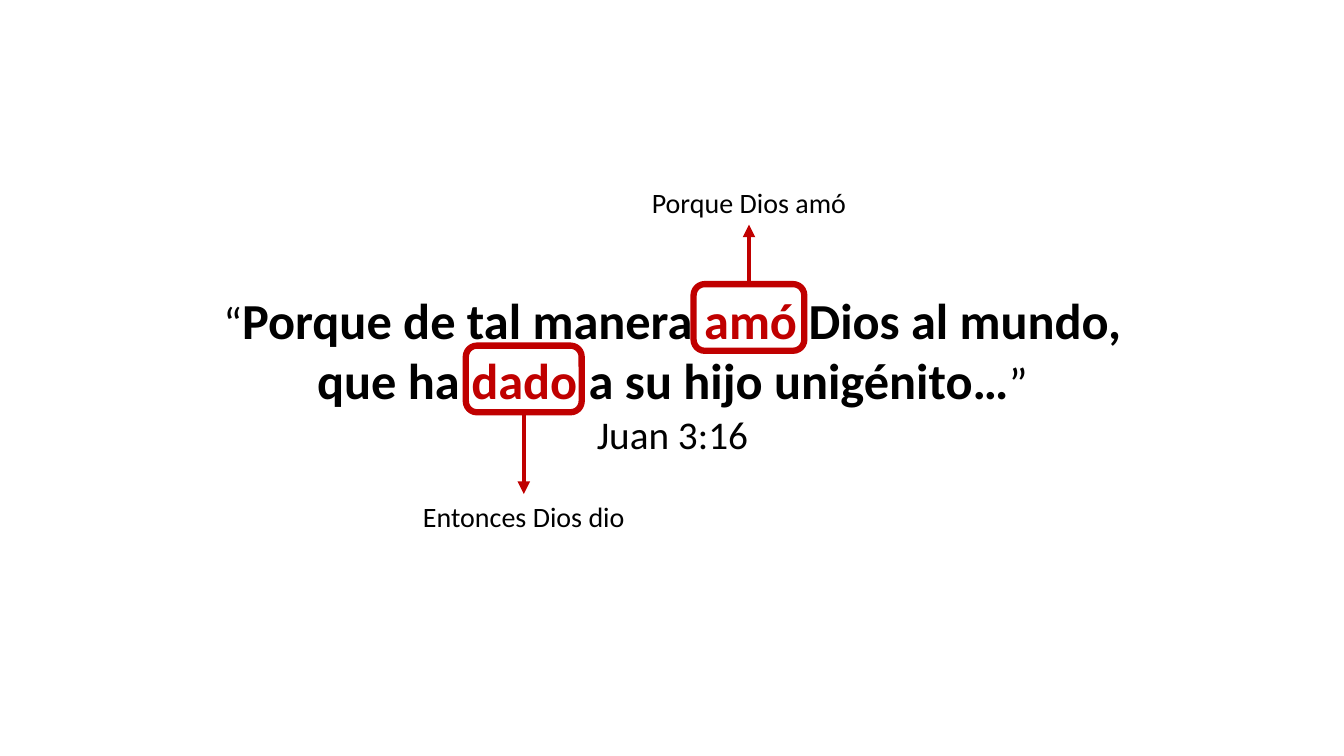
from dataclasses import dataclass

from lxml import etree
from pptx import Presentation
from pptx.dml.color import RGBColor
from pptx.enum.shapes import MSO_CONNECTOR, MSO_SHAPE
from pptx.enum.text import MSO_AUTO_SIZE, PP_ALIGN
from pptx.oxml.ns import qn
from pptx.util import Cm, Pt

STRAIGHT = MSO_CONNECTOR.STRAIGHT
ROUNDED = MSO_SHAPE.ROUNDED_RECTANGLE
CENTER = PP_ALIGN.CENTER
GROW = MSO_AUTO_SIZE.SHAPE_TO_FIT_TEXT


@dataclass(frozen=True)
class Theme:
    font: str = "Calibri"
    ink: RGBColor = RGBColor(0x00, 0x00, 0x00)
    accent: RGBColor = RGBColor(0xC0, 0x00, 0x00)
    verse: int = 36
    mark: int = 32
    reference: int = 28
    label: int = 20
    frame_line: float = 4.5
    arrow_line: float = 3


THEME = Theme()
LABEL_HEIGHT = 1.12

# Text styles: size, bold, colour
MARK = (THEME.mark, False, THEME.ink)
VERSE = (THEME.verse, True, THEME.ink)
KEYWORD = (THEME.verse, True, THEME.accent)
REFERENCE = (THEME.reference, False, THEME.ink)
LABEL = (THEME.label, False, THEME.ink)

QUOTE = [
    [("“", MARK), ("Porque de tal manera ", VERSE), ("amó", KEYWORD),
     (" Dios al mundo,", VERSE)],
    [("que ha ", VERSE), ("dado", KEYWORD),
     (" a su hijo unigénito…", VERSE), ("”", MARK)],
    [("Juan 3:16", REFERENCE)],
]


def add_text(page, left, top, width, height, lines):
    box = page.shapes.add_textbox(Cm(left), Cm(top), Cm(width), Cm(height))
    frame = box.text_frame
    frame.word_wrap = False
    frame.auto_size = GROW
    for index, line in enumerate(lines):
        para = frame.add_paragraph() if index else frame.paragraphs[0]
        para.alignment = CENTER
        for text, (size, bold, color) in line:
            span = para.add_run()
            span.text = text
            span.font.name = THEME.font
            span.font.size = Pt(size)
            span.font.bold = bold
            span.font.color.rgb = color


def add_frame(page, left, top, width, height):
    frame = page.shapes.add_shape(ROUNDED, Cm(left), Cm(top), Cm(width), Cm(height))
    frame.shadow.inherit = False
    frame.fill.background()
    frame.line.color.rgb = THEME.accent
    frame.line.width = Pt(THEME.frame_line)


def add_arrow(page, x, start, end):
    arrow = page.shapes.add_connector(STRAIGHT, Cm(x), Cm(start), Cm(x), Cm(end))
    arrow.line.color.rgb = THEME.accent
    arrow.line.width = Pt(THEME.arrow_line)
    etree.SubElement(arrow.line._get_or_add_ln(), qn("a:tailEnd"), type="triangle")
    etree.SubElement(arrow._element.spPr, qn("a:effectLst"))


def add_callout(page, left, top, width, height, tip, label, label_width):
    """Frame a word and point from it to a label above or below."""
    center = left + width / 2
    upward = tip < top
    add_frame(page, left, top, width, height)
    add_arrow(page, center, top if upward else top + height, tip)
    label_top = tip - LABEL_HEIGHT if upward else tip
    add_text(page, center - label_width / 2, label_top, label_width,
             LABEL_HEIGHT, [[(label, LABEL)]])


def main():
    deck = Presentation()
    deck.slide_width, deck.slide_height = Cm(33.87), Cm(19.05)
    page = deck.slides.add_slide(deck.slide_layouts[6])

    # Verse with its reference
    add_text(page, 5.26, 7.16, 23.37, 4.7, QUOTE)

    # Keywords and what they say
    add_callout(page, 17.48, 7.16, 2.79, 1.68, 5.66, "Porque Dios amó", 5.46)
    add_callout(page, 11.74, 8.71, 2.92, 1.68, 12.45, "Entonces Dios dio", 5.64)

    deck.save("out.pptx")


if __name__ == "__main__":
    main()
